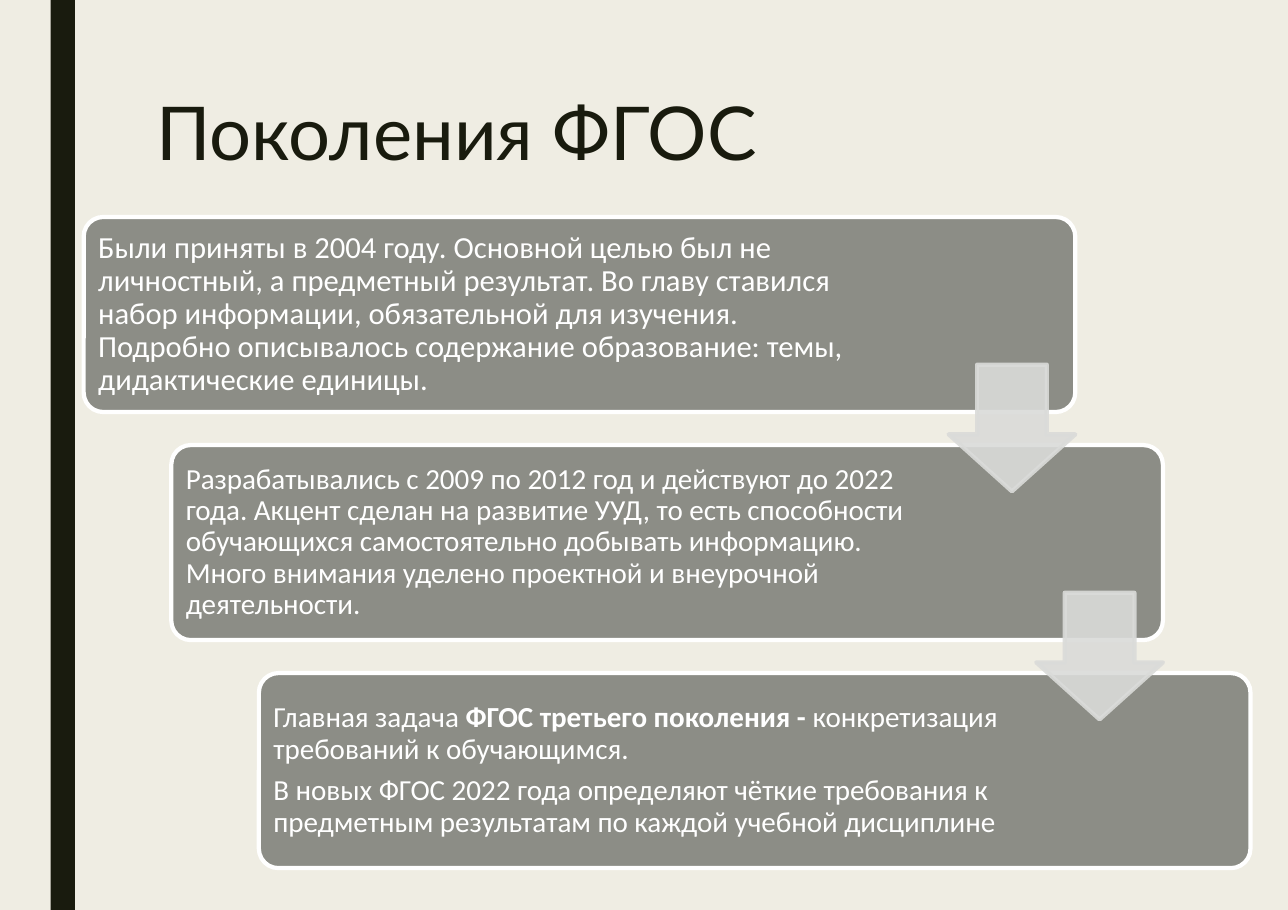
from lxml.etree import SubElement
from pptx import Presentation
from pptx.dml.color import RGBColor
from pptx.enum.shapes import MSO_SHAPE
from pptx.enum.text import MSO_ANCHOR, PP_ALIGN
from pptx.oxml.ns import qn
from pptx.util import Inches, Pt

TITLE = "Поколения ФГОС"
STAGES = [
    {"size": 20, "right": 1.89, "paras": [[
        ("Были приняты в 2004 году. Основной целью был не личностный, а предметный "
         "результат. Во главу ставился набор информации, обязательной для изучения. "
         "Подробно описывалось содержание образование: темы, дидактические единицы.", False)]]},
    {"size": 19, "right": 2.04, "paras": [[
        ("Разрабатывались с 2009 по 2012 год и действуют до 2022 года. Акцент сделан на "
         "развитие УУД, то есть способности обучающихся самостоятельно добывать "
         "информацию. Много внимания уделено проектной и внеурочной деятельности.", False)]]},
    {"size": 19, "right": 2.04, "paras": [
        [("Главная задача ", False), ("ФГОС третьего поколения - ", True),
         ("конкретизация требований к обучающимся.", False)],
        [("В новых ФГОС 2022 года определяют чёткие требования к предметным "
          "результатам по каждой учебной дисциплине", False)]]},
]
COLORS = {"paper": "EFEDE3", "ink": "191B0E", "card": "8C8D86",
          "white": "FFFFFF", "arrow": "DADBD9"}
CARD_X, CARD_Y, CARD_W, CARD_H = 0.76, 1.97, 9, 1.77
STEP_X, STEP_Y = 0.795, 2.07
ARROW = 1.15
ARROW_Y = 3.31


def rgb(name):
    return RGBColor.from_string(COLORS[name])


def write(tf, paras, font, size, color, spacing, after=0, anchor=MSO_ANCHOR.MIDDLE,
          insets=(0.1, 0.05, 0.1, 0.05)):
    tf.word_wrap = True
    tf.vertical_anchor = anchor
    tf.margin_left, tf.margin_top, tf.margin_right, tf.margin_bottom = map(Inches, insets)
    for i, runs in enumerate(paras):
        p = tf.paragraphs[0] if i == 0 else tf.add_paragraph()
        p.alignment = PP_ALIGN.LEFT
        p.line_spacing = spacing
        p.space_before = Pt(0)
        p.space_after = Pt(after)
        for text, bold in runs:
            r = p.add_run()
            r.text = text
            r.font.name = font
            r.font.size = Pt(size)
            r.font.bold = bold
            r.font.color.rgb = rgb(color)


def add_block(slide, kind, x, y, w, h, fill, line=None, adj=(), alpha=None):
    sp = slide.shapes.add_shape(kind, *map(Inches, (x, y, w, h)))
    sp.shadow.inherit = False
    for i, value in enumerate(adj):
        sp.adjustments[i] = value
    sp.fill.solid()
    sp.fill.fore_color.rgb = rgb(fill)
    if line:
        sp.line.color.rgb = rgb(line)
        sp.line.width = Pt(2.75)
    else:
        sp.line.fill.background()
    if alpha:
        for clr in sp.fill._xPr.iter(qn("a:srgbClr")):
            SubElement(clr, qn("a:alpha"), val=str(alpha * 1000))
    return sp


def main():
    prs = Presentation()
    prs.slide_width, prs.slide_height = Inches(11.69), Inches(8.26)
    slide = prs.slides.add_slide(prs.slide_layouts[5])
    slide.background.fill.solid()
    slide.background.fill.fore_color.rgb = rgb("paper")
    add_block(slide, MSO_SHAPE.RECTANGLE, 0.46, 0, 0.22, 8.26, "ink")

    title = slide.shapes.title
    title.left, title.top, title.width, title.height = map(Inches, (1.32, 0.83, 9.21, 1.79))
    write(title.text_frame, [[(TITLE, False)]], "Lato", 48.5, "ink", 0.89,
          anchor=MSO_ANCHOR.TOP)

    for i, stage in enumerate(STAGES):
        card = add_block(slide, MSO_SHAPE.ROUNDED_RECTANGLE, CARD_X + i * STEP_X,
                         CARD_Y + i * STEP_Y, CARD_W, CARD_H, "card", "white", [0.1])
        write(card.text_frame, stage["paras"], "Calibri", stage["size"], "white", 0.9,
              after=stage["size"] * 0.35, insets=(0.08, 0.08, stage["right"], 0.08))

    for i in range(len(STAGES) - 1):
        add_block(slide, MSO_SHAPE.DOWN_ARROW, CARD_X + CARD_W - ARROW + i * STEP_X,
                  ARROW_Y + i * STEP_Y, ARROW, ARROW, "arrow", "arrow", [0.55, 0.45], 90)

    prs.save("out.pptx")


if __name__ == "__main__":
    main()
